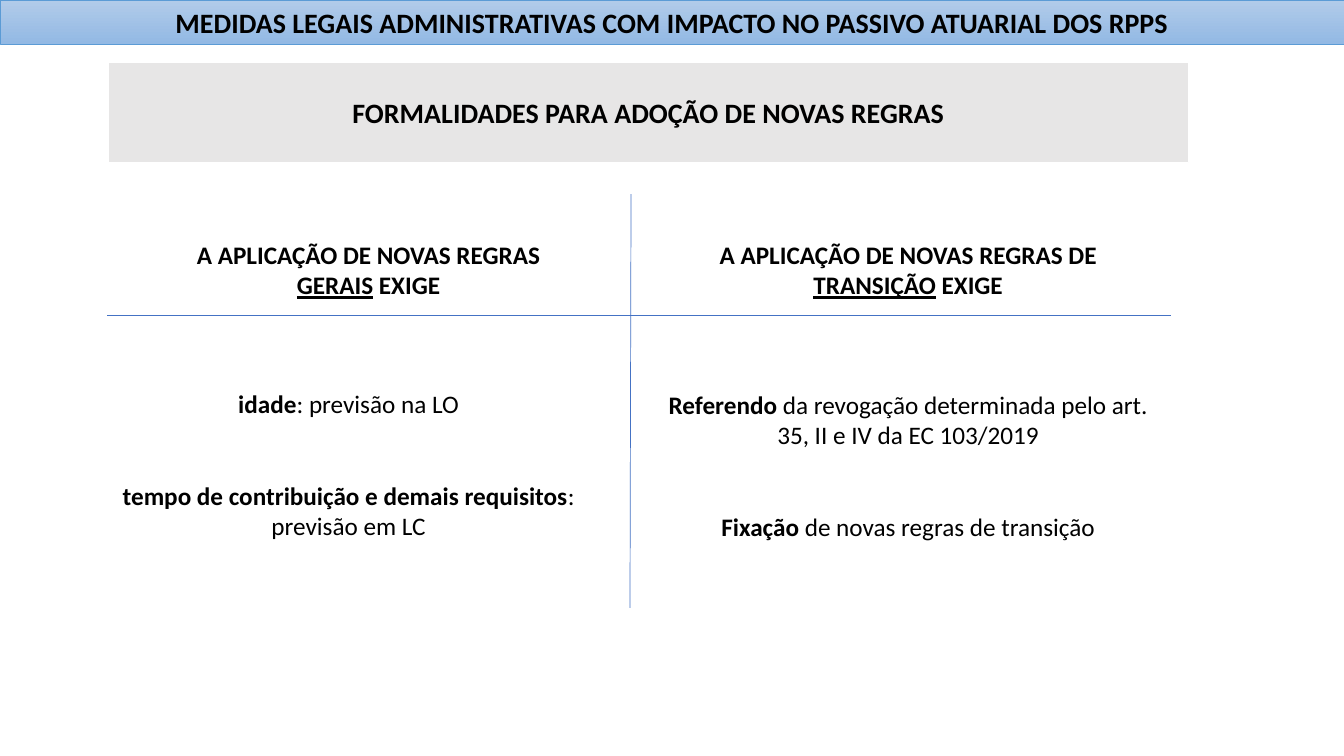
from lxml import etree
from pptx import Presentation
from pptx.dml.color import RGBColor
from pptx.enum.shapes import MSO_CONNECTOR, MSO_SHAPE
from pptx.enum.text import MSO_ANCHOR, MSO_AUTO_SIZE, PP_ALIGN
from pptx.oxml.ns import qn
from pptx.util import Pt

PX = 9525
STRAIGHT = MSO_CONNECTOR.STRAIGHT
RECTANGLE = MSO_SHAPE.RECTANGLE
TOP, MIDDLE = MSO_ANCHOR.TOP, MSO_ANCHOR.MIDDLE
NO_AUTOFIT = MSO_AUTO_SIZE.NONE
CENTER = PP_ALIGN.CENTER
FONT = "Calibri"
COMPARISON_LAYOUT = 4
COLORS = {
    "text": "000000",
    "rule": "4472C4",
    "banner": "E7E6E6",
    "banner_edge": "FFFFFF",
    "title_top": "B1CBE9",
    "title_bottom": "93B9E4",
    "title_edge": "5B9BD5",
}
COLUMNS = [
    {
        "heading": [
            [("A APLICAÇÃO DE NOVAS REGRAS", "b")],
            [("GERAIS", "bu"), (" EXIGE", "b")],
        ],
        "heading_box": (102, 223, 498, 68),
        "rules": [
            [("idade", "b"), (": previsão na LO", "")],
            [("tempo de contribuição e demais requisitos", "b"), (": previsão em LC", "")],
        ],
        "rules_box": (83, 365, 498, 242),
    },
    {
        "heading": [
            [("A APLICAÇÃO DE NOVAS REGRAS DE ", "b"), ("TRANSIÇÃO", "bu"), (" EXIGE", "b")],
        ],
        "heading_box": (616, 223, 498, 68),
        "rules": [
            [("Referendo", "b"),
             (" da revogação determinada pelo art. 35, II e IV da EC 103/2019", "")],
            [("Fixação", "b"), (" de novas regras de transição", "")],
        ],
        "rules_box": (616, 366, 498, 213),
    },
]


def color(name):
    """Return the named colour of the palette."""
    return RGBColor.from_string(COLORS[name])


def place(part, box):
    """Move a shape to a box given in px."""
    part.left, part.top, part.width, part.height = (length * PX for length in box)


def set_edge(part, name, width):
    """Give a shape or connector its line."""
    part.line.color.rgb = color(name)
    part.line.width = Pt(width)


def write(part, paragraphs, size, anchor=TOP, gap=0):
    """Write centred paragraphs of (text, style) runs without bullets."""
    frame = part.text_frame
    frame.word_wrap = True
    frame.auto_size = NO_AUTOFIT
    frame.vertical_anchor = anchor
    for index, runs in enumerate(paragraphs):
        paragraph = frame.add_paragraph() if index else frame.paragraphs[0]
        paragraph.alignment = CENTER
        paragraph.line_spacing = 1.0
        paragraph.space_before = Pt(gap if index else 0)
        paragraph.space_after = Pt(0)
        properties = paragraph._p.get_or_add_pPr()
        properties.set("marL", "0")
        properties.set("indent", "0")
        etree.SubElement(properties, qn("a:buNone"))
        for text, style in runs:
            run = paragraph.add_run()
            run.text = text
            run.font.name = FONT
            run.font.size = Pt(size)
            run.font.bold = "b" in style
            run.font.underline = "u" in style
            run.font.color.rgb = color("text")


def add_title(slide, box):
    """Fill the title placeholder as the gradient strip at the top."""
    title = slide.shapes.title
    place(title, box)
    title.fill.gradient()
    title.fill.gradient_angle = 270
    for stop, name in zip(title.fill.gradient_stops, ("title_top", "title_bottom")):
        stop.color.rgb = color(name)
    set_edge(title, "title_edge", 0.5)
    heading = "MEDIDAS LEGAIS ADMINISTRATIVAS COM IMPACTO NO PASSIVO ATUARIAL DOS RPPS"
    write(title, [[(heading, "b")]], 20, MIDDLE)


def add_banner(slide, box):
    """Add the grey banner with the topic."""
    banner = slide.shapes.add_shape(RECTANGLE, *(length * PX for length in box))
    banner.shadow.inherit = False
    banner.fill.solid()
    banner.fill.fore_color.rgb = color("banner")
    set_edge(banner, "banner_edge", 1)
    write(banner, [[("FORMALIDADES PARA ADOÇÃO DE NOVAS REGRAS", "b")]], 20, MIDDLE)


def add_rule(slide, ends):
    """Add one thin dividing line."""
    rule = slide.shapes.add_connector(STRAIGHT, *(length * PX for length in ends))
    set_edge(rule, "rule", 0.5)
    etree.SubElement(rule._element.spPr, qn("a:effectLst"))


def add_cross(slide, box):
    """Divide the box into headings and rules, left and right."""
    left, top, width, height = box
    middle = left + width // 2 - 8
    heading_bottom = top + 115
    add_rule(slide, (left, heading_bottom, left + width, heading_bottom))
    add_rule(slide, (middle + 1, top, middle, top + height))


def add_column(heading, rules, column):
    """Fill one heading placeholder and the list below it."""
    place(heading, column["heading_box"])
    write(heading, column["heading"], 18)
    place(rules, column["rules_box"])
    write(rules, column["rules"], 18, gap=44)


def main():
    """Build and save the slide."""
    deck = Presentation()
    deck.slide_width, deck.slide_height = 1280 * PX, 720 * PX
    slide = deck.slides.add_slide(deck.slide_layouts[COMPARISON_LAYOUT])
    add_title(slide, (0, 0, 1280, 42))
    add_banner(slide, (103, 59, 1029, 96))
    add_cross(slide, (102, 185, 1013, 394))
    bodies = list(slide.placeholders)[1:]
    for heading, rules, column in zip(bodies[::2], bodies[1::2], COLUMNS):
        add_column(heading, rules, column)
    deck.save("out.pptx")


if __name__ == "__main__":
    main()
